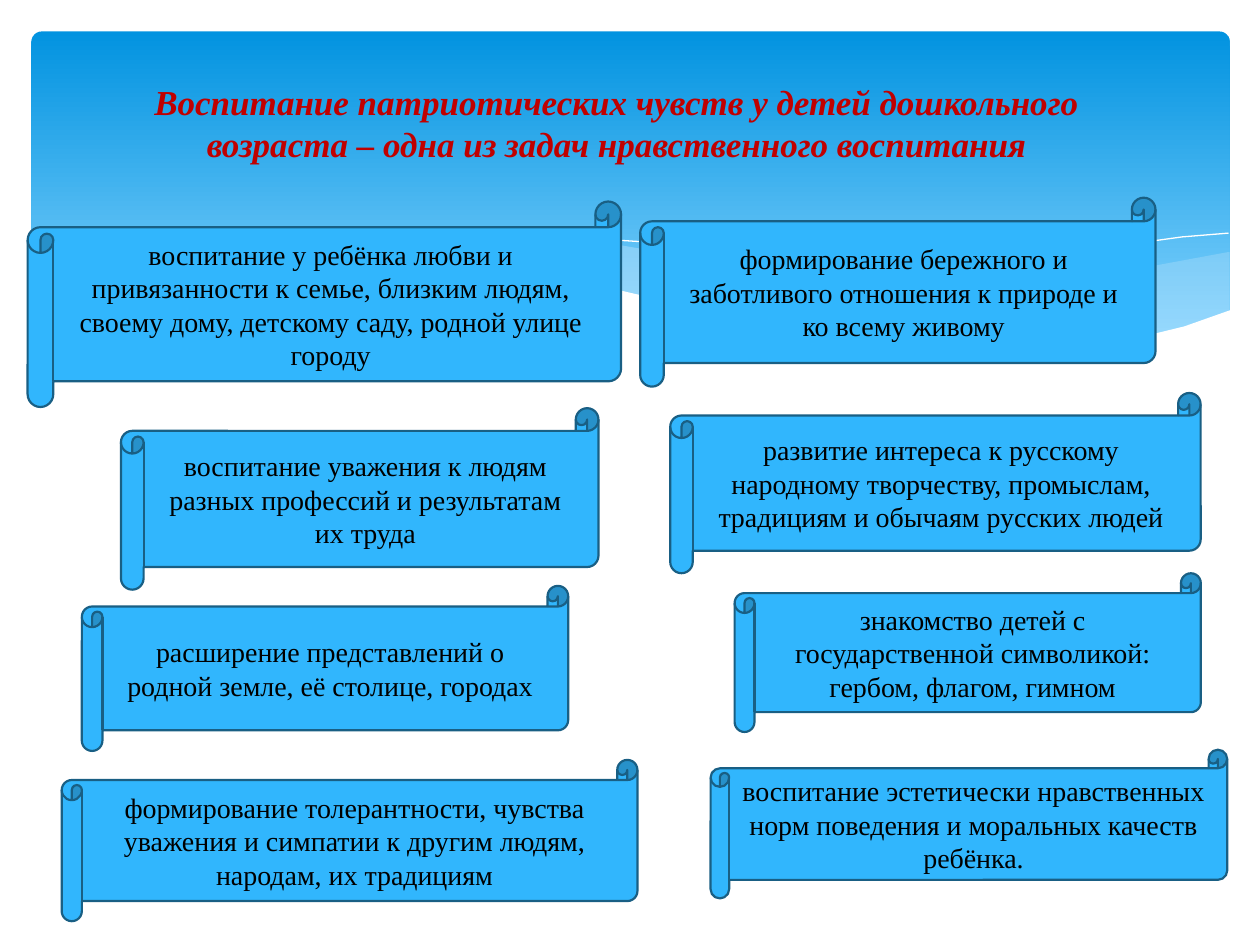
from dataclasses import dataclass
from typing import Optional

from lxml.etree import SubElement
from pptx import Presentation
from pptx.dml.color import RGBColor
from pptx.enum.shapes import MSO_SHAPE
from pptx.enum.text import MSO_ANCHOR, PP_ALIGN
from pptx.oxml.ns import qn
from pptx.util import Pt

SKY_TOP, SKY_BOTTOM, HAZE, WHITE = "0293E0", "83D3FE", "C6E7FC", "FFFFFF"
SCROLL_FILL, SCROLL_EDGE = "31B6FD", "195F84"
TITLE_RED, BLACK = "C00000", "000000"
FONT = "Times New Roman"
TITLE = (
    "Воспитание патриотических чувств у детей дошкольного возраста – "
    "одна из задач нравственного воспитания"
)


@dataclass
class Wave:
    points: list[tuple[float, float]]
    fill: Optional[str] = None
    opacity: int = 100
    edge: Optional[str] = None


@dataclass
class Scroll:
    left: float
    top: float
    width: float
    height: float
    task: str


WAVES = [
    Wave([
        (702, 144), (663, 151.2), (620, 160.6), (561, 174.2), (508, 185),
        (476, 190.8), (507.6, 195.1), (545, 198.7), (586, 200.2),
        (621.4, 198.7), (652, 194.4), (678.2, 186.5), (702.7, 177.8),
        (702.7, 144),
    ], fill=HAZE, opacity=29),
    Wave([
        (643, 196.6), (602.6, 190.8), (558, 182.9), (508.3, 172.8),
        (452.9, 159.8), (420.5, 151.9), (389.5, 146.2), (352, 139.7),
        (318, 136.1), (287.3, 133.9), (259.9, 133.2), (236.2, 134.6),
        (205.9, 137.5), (246.2, 143.3), (290.9, 151.9), (323.3, 159.8),
        (381.6, 172.8), (432.7, 183.6), (478.8, 191.5), (519.8, 197.3),
        (556.6, 199.4), (589, 200.2), (617, 199.4),
    ], fill=HAZE, opacity=40),
    Wave([
        (222.5, 140.4), (241.2, 137.5), (261.4, 136.1), (288.7, 134.6),
        (324, 135.4), (367.2, 138.2), (419, 144), (478.8, 153.4),
        (547.2, 167.8), (598.3, 180.7), (653, 195.8),
    ], edge=WHITE),
    Wave([
        (441.4, 185), (470.2, 177.1), (518.4, 164.9), (580.3, 151.2),
        (634.3, 141.1), (675.4, 135.4), (702, 133.2),
    ], edge=WHITE),
    Wave([
        (703.4, 177.1), (676.8, 186.5), (647.3, 193.7), (612, 198),
        (571, 198.7), (522.7, 195.8), (466.6, 188.6), (416.9, 180),
        (362.2, 167.8), (321.8, 158.4), (281.5, 149), (244.8, 141.8),
        (210.2, 136.8), (180, 133.9), (151.9, 132.5), (127.4, 132.5),
        (95, 133.9), (68.4, 137.5), (48.2, 141.8), (33.1, 146.2),
        (20.9, 151.2), (16.6, 153.4), (16.6, 236.9), (703.4, 236.9),
    ], fill=WHITE),
]

SCROLLS = [
    Scroll(15.8, 115.2, 339.1, 117.4,
           "воспитание у ребёнка любви и привязанности к семье, близким людям, "
           "своему дому, детскому саду, родной улице городу"),
    Scroll(69.1, 233.3, 272.9, 103.7,
           "воспитание уважения к людям разных профессий и результатам их труда"),
    Scroll(365.8, 113, 294.5, 108,
           "формирование бережного и заботливого отношения к природе "
           "и ко всему живому"),
    Scroll(383, 224.6, 303.1, 103,
           "развитие интереса к русскому народному творчеству, промыслам, "
           "традициям и обычаям русских людей"),
    Scroll(46.8, 334.8, 277.9, 94.3,
           "расширение представлений о родной земле, её столице, городах"),
    Scroll(419.8, 327.6, 266.4, 90.7,
           "знакомство детей с государственной символикой: "
           "гербом, флагом, гимном"),
    Scroll(35.3, 434.2, 329, 92.2,
           "формирование толерантности, чувства уважения и симпатии "
           "к другим людям, народам, их традициям"),
    Scroll(406.1, 428.4, 295.2, 85,
           "воспитание эстетически нравственных норм поведения "
           "и моральных качеств ребёнка."),
]


def color(hex_code: str) -> RGBColor:
    return RGBColor.from_string(hex_code)


def write(shape, text: str, *, size: float, ink: str, bold: bool = False,
          italic: bool = False, anchor=MSO_ANCHOR.MIDDLE) -> None:
    frame = shape.text_frame
    frame.word_wrap = True
    frame.vertical_anchor = anchor
    paragraph = frame.paragraphs[0]
    paragraph.alignment = PP_ALIGN.CENTER
    run = paragraph.add_run()
    run.text = text
    run.font.name = FONT
    run.font.size = Pt(size)
    run.font.bold = bold
    run.font.italic = italic
    run.font.color.rgb = color(ink)


def draw_sky(shapes) -> None:
    sky = shapes.add_shape(
        MSO_SHAPE.ROUNDED_RECTANGLE, Pt(18), Pt(18), Pt(684.7), Pt(194.4))
    sky.adjustments[0] = 0.03
    sky.shadow.inherit = False
    sky.line.fill.background()
    sky.fill.gradient()
    sky.fill.gradient_angle = 270
    stops = ((0, SKY_TOP), (0.9, SKY_BOTTOM))
    for stop, (position, shade) in zip(sky.fill.gradient_stops, stops):
        stop.position = position
        stop.color.rgb = color(shade)


def draw_wave(shapes, wave: Wave) -> None:
    start, *rest = [(Pt(x), Pt(y)) for x, y in wave.points]
    builder = shapes.build_freeform(*start)
    builder.add_line_segments(rest, close=wave.fill is not None)
    band = builder.convert_to_shape()
    band.shadow.inherit = False
    if wave.fill:
        band.fill.solid()
        band.fill.fore_color.rgb = color(wave.fill)
        if wave.opacity < 100:
            tint = next(band.fill._xPr.iter(qn("a:srgbClr")))
            SubElement(tint, qn("a:alpha"), val=str(wave.opacity * 1000))
    else:
        band.fill.background()
    if wave.edge:
        band.line.color.rgb = color(wave.edge)
        band.line.width = Pt(0)
    else:
        band.line.fill.background()


def draw_scroll(shapes, scroll: Scroll) -> None:
    banner = shapes.add_shape(
        MSO_SHAPE.HORIZONTAL_SCROLL, Pt(scroll.left), Pt(scroll.top),
        Pt(scroll.width), Pt(scroll.height))
    banner.shadow.inherit = False
    banner.fill.solid()
    banner.fill.fore_color.rgb = color(SCROLL_FILL)
    banner.line.color.rgb = color(SCROLL_EDGE)
    banner.line.width = Pt(1.25)
    write(banner, scroll.task, size=16, ink=BLACK)


def main() -> None:
    deck = Presentation()
    deck.slide_width, deck.slide_height = Pt(720), Pt(540)
    shapes = deck.slides.add_slide(deck.slide_layouts[6]).shapes
    draw_sky(shapes)
    for wave in WAVES:
        draw_wave(shapes, wave)
    heading = shapes.add_textbox(Pt(69.1), Pt(42.5), Pt(566.6), Pt(55.4))
    write(heading, TITLE, size=20, ink=TITLE_RED, bold=True, italic=True,
          anchor=MSO_ANCHOR.TOP)
    for scroll in SCROLLS:
        draw_scroll(shapes, scroll)
    deck.save("out.pptx")


if __name__ == "__main__":
    main()
